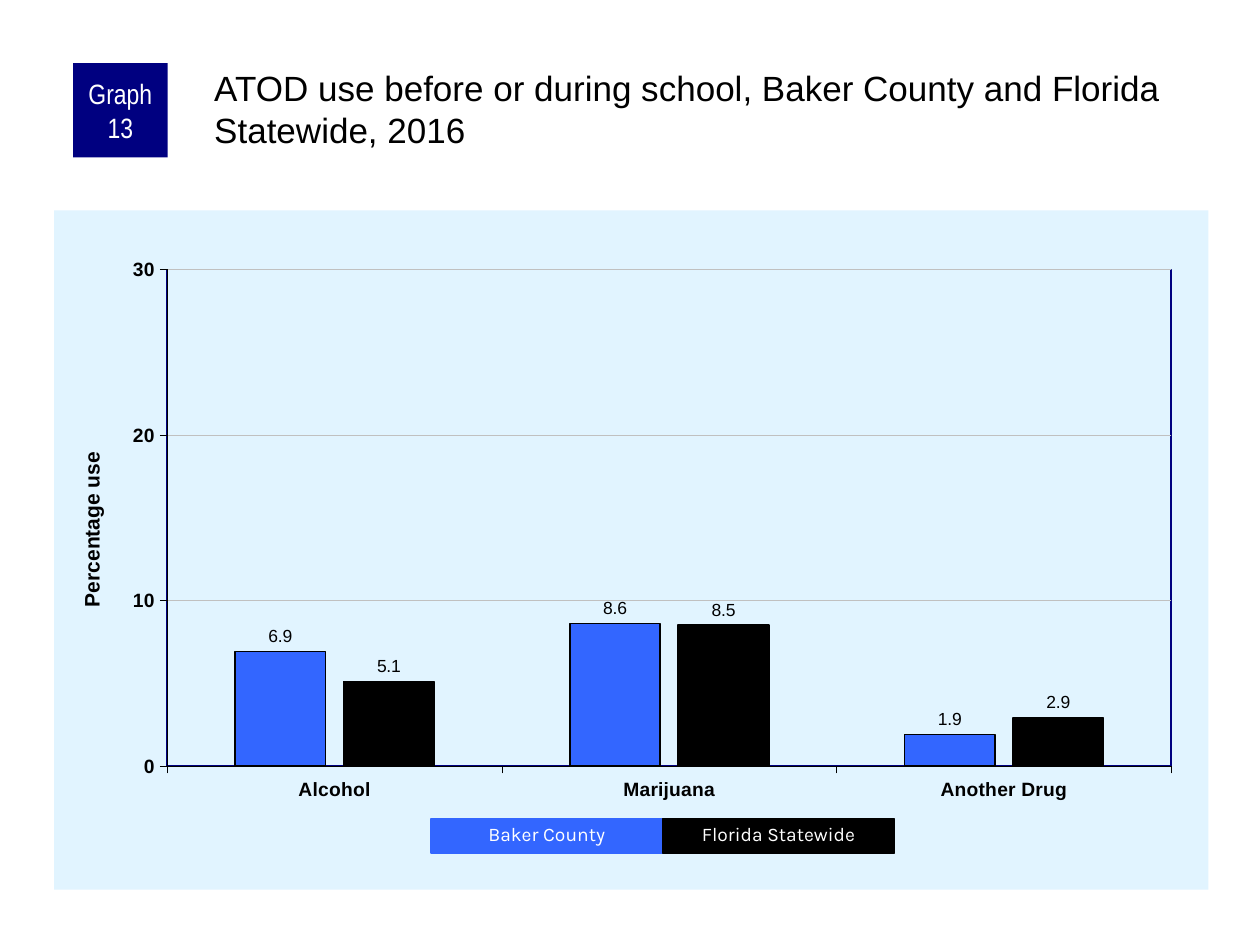
from dataclasses import dataclass

from lxml import etree
from pptx import Presentation
from pptx.chart.data import CategoryChartData
from pptx.dml.color import RGBColor
from pptx.enum.chart import XL_CHART_TYPE, XL_LABEL_POSITION, XL_TICK_MARK
from pptx.enum.shapes import MSO_SHAPE
from pptx.enum.text import MSO_ANCHOR, PP_ALIGN
from pptx.oxml import parse_xml
from pptx.oxml.ns import qn
from pptx.util import Inches, Pt

CLUSTERED = XL_CHART_TYPE.COLUMN_CLUSTERED
OUTSIDE_END = XL_LABEL_POSITION.OUTSIDE_END
TICK_OUTSIDE = XL_TICK_MARK.OUTSIDE
TICK_NONE = XL_TICK_MARK.NONE
RECTANGLE = MSO_SHAPE.RECTANGLE
TOP, MIDDLE = MSO_ANCHOR.TOP, MSO_ANCHOR.MIDDLE
LEFT, CENTER = PP_ALIGN.LEFT, PP_ALIGN.CENTER

NAMESPACES = (
    'xmlns:c="http://schemas.openxmlformats.org/drawingml/2006/chart" '
    'xmlns:a="http://schemas.openxmlformats.org/drawingml/2006/main"'
)


@dataclass(frozen=True)
class Theme:
    navy: str = "000080"
    blue: str = "3366FF"
    black: str = "000000"
    white: str = "FFFFFF"
    panel: str = "E1F4FF"
    grid: str = "C0C0C0"
    font: str = "Arial"
    badge_font: str = "Arial Narrow"
    legend_font: str = "Karla"
    title_size: float = 20
    badge_size: float = 16
    axis_title_size: float = 12
    chart_size: float = 11.5
    axis_size: float = 11
    label_size: float = 10


class GraphSlide:
    def __init__(self, slide, theme):
        self.slide = slide
        self.theme = theme

    def style_font(self, font, size, color, name=None, bold=False):
        font.size = Pt(size)
        font.name = name or self.theme.font
        font.bold = bold
        font.color.rgb = RGBColor.from_string(color)

    def style_line(self, line, color, width):
        line.color.rgb = RGBColor.from_string(color)
        line.width = Pt(width)

    def set_text(self, shape, text, size, color, font, align, anchor, insets):
        frame = shape.text_frame
        frame.word_wrap = True
        frame.vertical_anchor = anchor
        (frame.margin_left, frame.margin_top,
         frame.margin_right, frame.margin_bottom) = map(Inches, insets)
        frame.text = text
        paragraph = frame.paragraphs[0]
        paragraph.alignment = align
        self.style_font(paragraph.runs[0].font, size, color, font)
        return paragraph

    def text(self, box, text, size):
        title = self.slide.shapes.add_textbox(*map(Inches, box))
        self.set_text(title, text, size, self.theme.black, self.theme.font,
                      LEFT, TOP, (0.03, 0.03, 0, 0))

    def label_box(self, box, text, fill, size, font, insets,
                  anchor=MIDDLE, outlined=False, spacing=None):
        label = self.slide.shapes.add_shape(RECTANGLE, *map(Inches, box))
        label.shadow.inherit = False
        label.fill.solid()
        label.fill.fore_color.rgb = RGBColor.from_string(fill)
        if outlined:
            self.style_line(label.line, fill, 0.75)
        else:
            label.line.fill.background()
        paragraph = self.set_text(label, text, size, self.theme.white, font,
                                  CENTER, anchor, insets)
        paragraph.line_spacing = spacing

    def column_chart(self, box, categories, series, axis_title, plot):
        theme = self.theme
        data = CategoryChartData(number_format="0.0")
        data.categories = categories
        for name, values, _ in series:
            data.add_series(name, values)
        chart = self.slide.shapes.add_chart(
            CLUSTERED, *map(Inches, box), data).chart
        chart.has_title = False
        chart.has_legend = False
        self.style_font(chart.font, theme.chart_size, theme.black)

        columns = chart.plots[0]
        columns.gap_width = 150
        columns.overlap = -20
        columns.vary_by_categories = False
        for column, (_, _, color) in zip(columns.series, series):
            column.format.fill.solid()
            column.format.fill.fore_color.rgb = RGBColor.from_string(color)
            self.style_line(column.format.line, theme.black, 1)
            labels = column.data_labels
            labels.show_value = True
            labels.number_format = "0.0"
            labels.number_format_is_linked = False
            labels.position = OUTSIDE_END
            self.style_font(labels.font, theme.label_size, theme.black)

        percent_axis = chart.value_axis
        for axis in (chart.category_axis, percent_axis):
            axis.major_tick_mark = TICK_OUTSIDE
            axis.minor_tick_mark = TICK_NONE
            self.style_line(axis.format.line, theme.black, 0.25)
            self.style_font(axis.tick_labels.font, theme.axis_size,
                            theme.black, bold=True)
        percent_axis.minimum_scale = 0
        percent_axis.maximum_scale = 30
        percent_axis.major_unit = 10
        percent_axis.tick_labels.number_format = "0"
        percent_axis.tick_labels.number_format_is_linked = False
        self.style_line(percent_axis.major_gridlines.format.line,
                        theme.grid, 0.25)
        heading = percent_axis.axis_title.text_frame
        heading.text = axis_title
        self.style_font(heading.paragraphs[0].runs[0].font,
                        theme.axis_title_size, theme.black, bold=True)
        self.frame_chart(chart, plot)

    def frame_chart(self, chart, plot):
        theme = self.theme
        chart_root = chart.element.find(qn("c:chart"))
        plot_area = chart_root.find(qn("c:plotArea"))
        for old_layout in plot_area.findall(qn("c:layout")):
            plot_area.remove(old_layout)
        layout = parse_xml(f"<c:layout {NAMESPACES}><c:manualLayout/></c:layout>")
        settings = [("layoutTarget", "inner"), ("xMode", "edge"),
                    ("yMode", "edge"), *zip("xywh", plot)]
        for tag, value in settings:
            etree.SubElement(layout[0], qn(f"c:{tag}"), val=str(value))
        plot_area.insert(0, layout)
        plot_area.append(parse_xml(
            f'<c:spPr {NAMESPACES}><a:noFill/><a:ln w="{Pt(1)}"><a:solidFill>'
            f'<a:srgbClr val="{theme.navy}"/></a:solidFill></a:ln></c:spPr>'))
        chart_root.addnext(parse_xml(
            f'<c:spPr {NAMESPACES}><a:solidFill><a:srgbClr val="{theme.panel}"/>'
            '</a:solidFill><a:ln><a:noFill/></a:ln></c:spPr>'))


def main():
    theme = Theme()
    deck = Presentation()
    deck.slide_width, deck.slide_height = Inches(10), Inches(7.5)
    page = GraphSlide(deck.slides.add_slide(deck.slide_layouts[6]), theme)

    substances = ["Alcohol", "Marijuana", "Another Drug"]
    regions = [
        ("Baker County", (6.9, 8.6, 1.9), theme.blue),
        ("Florida Statewide", (5.1, 8.5, 2.9), theme.black),
    ]
    page.column_chart((0.43, 1.67, 9.16, 5.39), substances, regions,
                      "Percentage use", (0.098, 0.087, 0.87, 0.731))
    page.label_box((0.58, 0.5, 0.75, 0.75), "Graph 13", theme.navy,
                   theme.badge_size, theme.badge_font, (0.05, 0, 0.05, 0))
    page.text((1.67, 0.5, 7.92, 0.83),
              "ATOD use before or during school, Baker County and Florida "
              "Statewide, 2016", theme.title_size)

    key_left, key_width = 3.42, 1.84
    for index, (region, _, color) in enumerate(regions):
        page.label_box((key_left + index * key_width, 6.5, key_width, 0.27),
                       region, color, theme.axis_size, theme.legend_font,
                       (0.1, 0.05, 0.1, 0.05), TOP, True, 0.9)

    deck.save("out.pptx")


if __name__ == "__main__":
    main()
